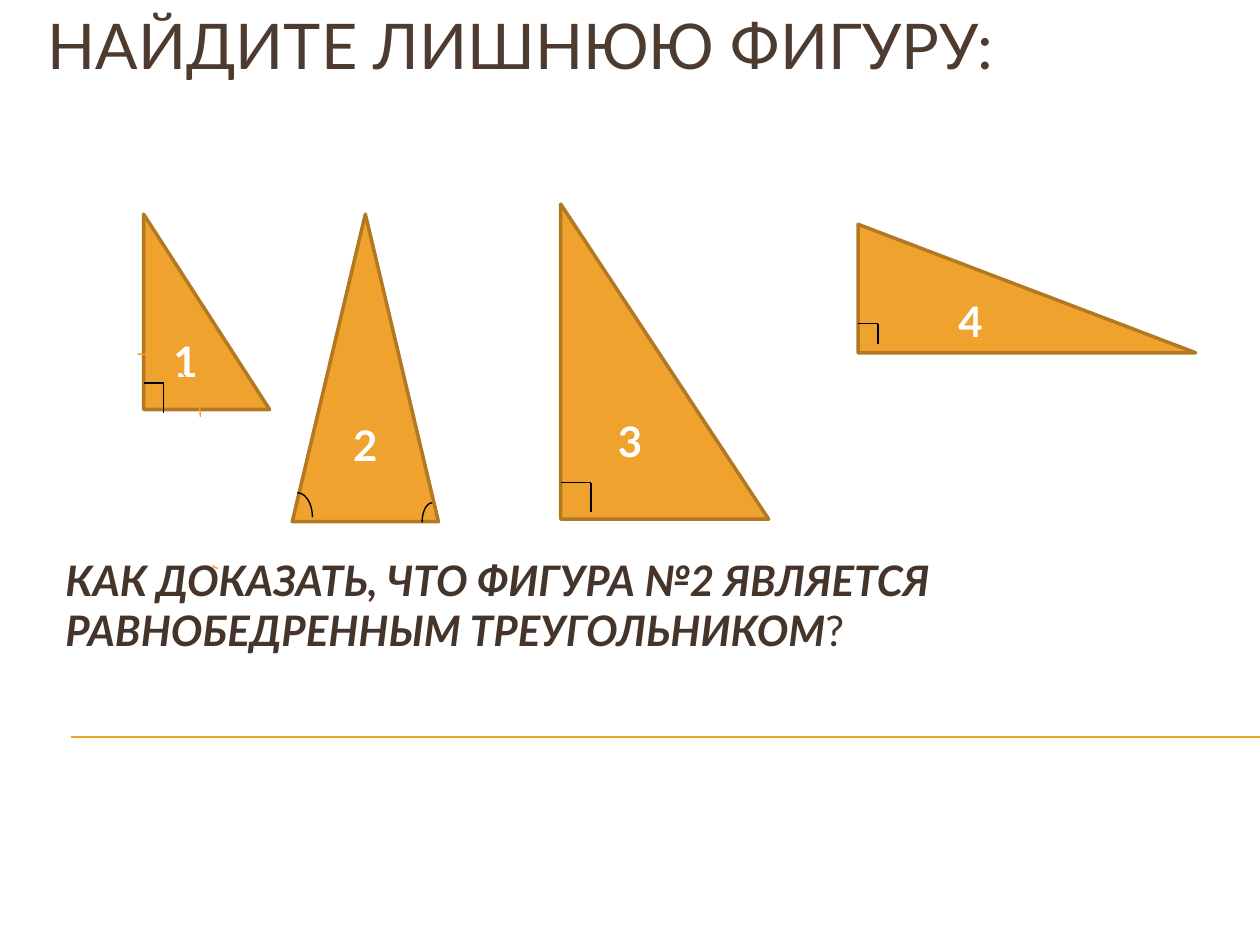
"""Builds a geometry slide asking which of four triangles is the odd one out."""
from lxml import etree
from pptx import Presentation
from pptx.dml.color import RGBColor
from pptx.enum.shapes import MSO_CONNECTOR, MSO_SHAPE
from pptx.enum.text import MSO_ANCHOR, PP_ALIGN
from pptx.oxml.ns import qn
from pptx.util import Inches, Pt

RIGHT, ISOSCELES, ARC = MSO_SHAPE.RIGHT_TRIANGLE, MSO_SHAPE.ISOSCELES_TRIANGLE, MSO_SHAPE.ARC
STRAIGHT = MSO_CONNECTOR.STRAIGHT
TOP, MIDDLE, BOTTOM = MSO_ANCHOR.TOP, MSO_ANCHOR.MIDDLE, MSO_ANCHOR.BOTTOM
CENTER = PP_ALIGN.CENTER
COLORS = {"title": "4E3B30", "question": "45342A", "accent": "F0A22E",
          "edge": "B27822", "mark": "000000", "number": "FFFFFF"}
FONT = "Lato"
CELL = Inches(0.1)
MARK_WIDTH = 0.79

deck = Presentation()
deck.slide_width, deck.slide_height = 100 * CELL, 75 * CELL
slide = deck.slides.add_slide(deck.slide_layouts[6])


def add_words(paragraph, words, size, color, bold=False, italic=False):
    run = paragraph.add_run()
    run.text = words
    run.font.name, run.font.size = FONT, Pt(size)
    run.font.bold, run.font.italic = bold, italic
    run.font.color.rgb = RGBColor.from_string(COLORS[color])


def add_line(start_col, start_row, end_col, end_row, color, width):
    ends = [round(cells * CELL) for cells in (start_col, start_row, end_col, end_row)]
    line = slide.shapes.add_connector(STRAIGHT, *ends)
    line.line.color.rgb = RGBColor.from_string(COLORS[color])
    line.line.width = Pt(width)
    etree.SubElement(line._element.spPr, qn("a:effectLst"))


add_line(5.6, 58.5, 100, 58.5, "accent", 0.75)

headings = [
    (2.8, 0, 92.5, 13.4, TOP, 36, "title", [("НАЙДИТЕ ЛИШНЮЮ ФИГУРУ:", False)]),
    (4.2, 42.5, 92.5, 10, BOTTOM, 24, "question",
     [("КАК ДОКАЗАТЬ, ЧТО ФИГУРА №2 ЯВЛЯЕТСЯ РАВНОБЕДРЕННЫМ ТРЕУГОЛЬНИКОМ", True),
      ("?", False)]),
]
for *place, anchor, size, color, phrases in headings:
    heading = slide.shapes.add_textbox(*(round(cells * CELL) for cells in place))
    heading.text_frame.word_wrap = True
    heading.text_frame.vertical_anchor = anchor
    for words, strong in phrases:
        add_words(heading.text_frame.paragraphs[0], words, size, color, strong, strong)

triangles = [
    ("1", RIGHT, 11.4, 17, 10, 15.5),
    ("2", ISOSCELES, 23.2, 17, 11.6, 24.4),
    ("4", RIGHT, 68.1, 17.8, 26.8, 10.2),
    ("3", RIGHT, 44.5, 16.2, 16.5, 25),
]
for number, kind, *place in triangles:
    triangle = slide.shapes.add_shape(kind, *(round(cells * CELL) for cells in place))
    triangle.shadow.inherit = False
    triangle.fill.solid()
    triangle.fill.fore_color.rgb = RGBColor.from_string(COLORS["accent"])
    triangle.line.color.rgb = RGBColor.from_string(COLORS["edge"])
    triangle.line.width = Pt(2)
    triangle.text_frame.word_wrap = True
    triangle.text_frame.vertical_anchor = MIDDLE
    label = triangle.text_frame.paragraphs[0]
    label.alignment = CENTER
    add_words(label, number, 24, "number", True)

angle_arcs = [
    (22.4, 39.1, 2.4, 3.9, "mark", ()),
    (33.5, 39.9, 1.6, 3.1, "mark", ("flipH",)),
    (5.9, 28.1, 10, 10, "accent", ()),
    (16.9, 44.6, 0.8, 0.5, "accent", ("flipH", "flipV")),
]
for *place, color, flips in angle_arcs:
    arc = slide.shapes.add_shape(ARC, *(round(cells * CELL) for cells in place))
    arc.shadow.inherit = False
    arc.fill.background()
    arc.line.color.rgb = RGBColor.from_string(COLORS[color])
    arc.line.width = Pt(MARK_WIDTH)
    for flip in flips:
        arc._element.spPr.find(qn("a:xfrm")).set(flip, "1")

right_angles = [(44.5, 38.3, 2.4, 2.3), (68.1, 25.7, 1.6, 1.6), (11.4, 30.4, 1.6, 2.4)]
for col, row, across, down in right_angles:
    add_line(col, row, col + across, row, "mark", MARK_WIDTH)
    add_line(col + across, row, col + across, row + down, "mark", MARK_WIDTH)

deck.save("out.pptx")
